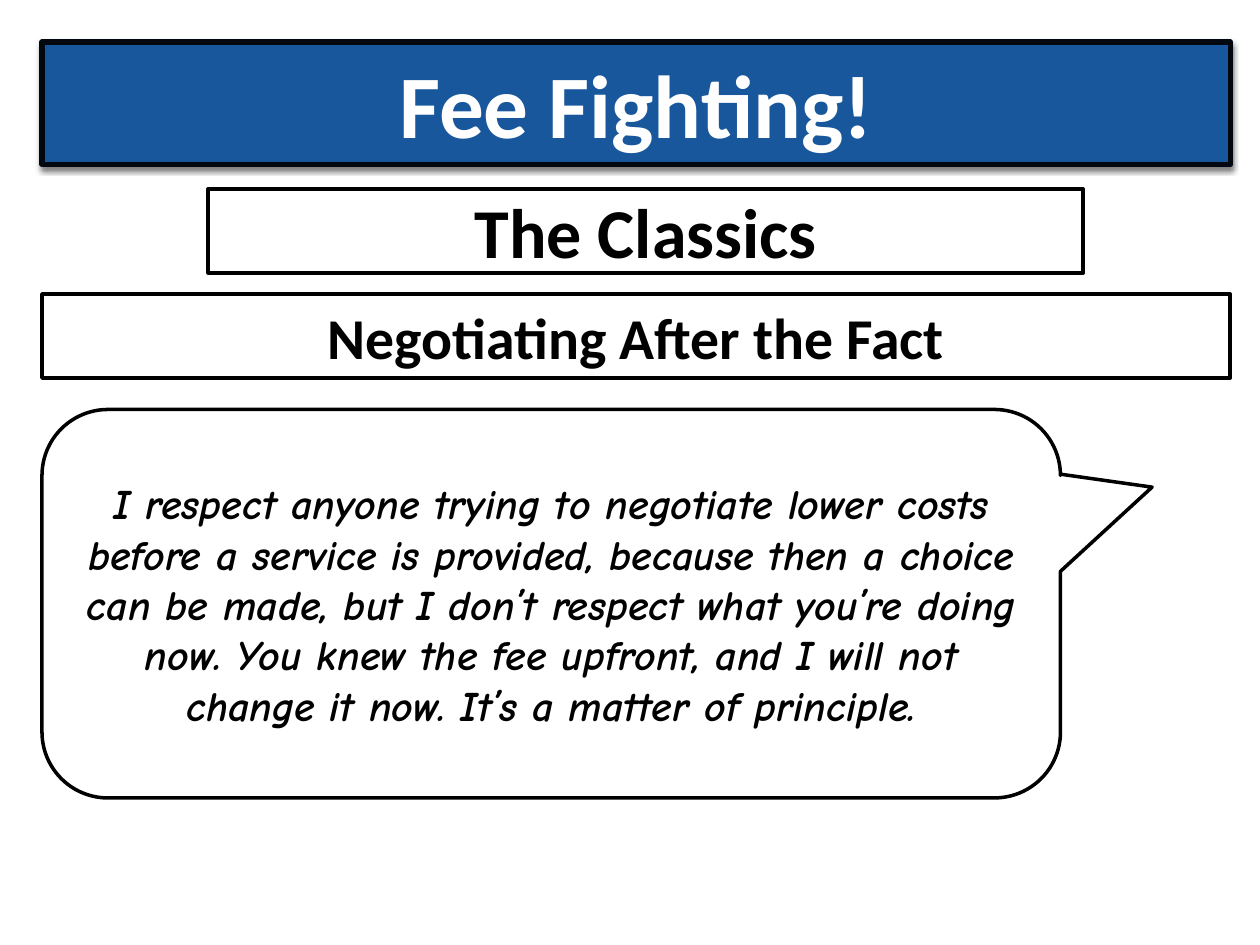
from dataclasses import dataclass

from lxml.etree import SubElement
from pptx import Presentation
from pptx.dml.color import RGBColor
from pptx.enum.shapes import MSO_SHAPE
from pptx.enum.text import MSO_ANCHOR, MSO_AUTO_SIZE, PP_ALIGN
from pptx.oxml.ns import qn
from pptx.shapes.autoshape import Shape
from pptx.util import Pt

COLORS = {
    "blue": "18579B",
    "navy": "02080F",
    "white": "FFFFFF",
    "black": "000000",
}
LEFT = 24
FULL_WIDTH = 679


@dataclass
class Panel:
    text: str
    left: float
    top: float
    width: float
    height: float
    size: float
    font: str = "Calibri"
    italic: bool = False
    fill: str = "white"
    line: str = "black"
    line_width: float = 2
    color: str = "black"
    kind: MSO_SHAPE = MSO_SHAPE.RECTANGLE
    adjustments: tuple[float, ...] = ()


TITLE = Panel("Fee Fighting!", LEFT, 24, FULL_WIDTH, 70, 51,
              fill="blue", line="navy", line_width=3, color="white")
PANELS = [
    Panel("The Classics", 119, 108, 500, 48, 40),
    Panel("Negotiating After the Fact", LEFT, 168, FULL_WIDTH, 48, 33),
    Panel(
        "I respect anyone trying to negotiate lower costs before a service is "
        "provided, because then a choice can be made, but I don’t respect what "
        "you’re doing now. You knew the fee upfront, and I will not change it "
        "now. It’s a matter of principle.",
        LEFT, 234, 582, 222, 24, font="Comic Neue", italic=True,
        kind=MSO_SHAPE.ROUNDED_RECTANGULAR_CALLOUT,
        adjustments=(0.59, -0.3, 0.17),
    ),
]


def rgb(name: str) -> RGBColor:
    return RGBColor.from_string(COLORS[name])


def format_panel(shape: Shape, panel: Panel) -> None:
    """Place a shape and give it the panel's fill, line and text."""
    shape.left, shape.top = Pt(panel.left), Pt(panel.top)
    shape.width, shape.height = Pt(panel.width), Pt(panel.height)
    shape.fill.solid()
    shape.fill.fore_color.rgb = rgb(panel.fill)
    shape.line.color.rgb = rgb(panel.line)
    shape.line.width = Pt(panel.line_width)
    shape.shadow.inherit = False

    text_frame = shape.text_frame
    text_frame.text = panel.text
    text_frame.word_wrap = True
    text_frame.auto_size = MSO_AUTO_SIZE.NONE
    text_frame.vertical_anchor = MSO_ANCHOR.MIDDLE
    paragraph = text_frame.paragraphs[0]
    paragraph.alignment = PP_ALIGN.CENTER
    font = paragraph.runs[0].font
    font.name = panel.font
    font.size = Pt(panel.size)
    font.bold = True
    font.italic = panel.italic
    font.color.rgb = rgb(panel.color)


def add_panel(slide, panel: Panel) -> None:
    shape = slide.shapes.add_shape(panel.kind, 0, 0, Pt(panel.width), Pt(panel.height))
    for index, value in enumerate(panel.adjustments):
        shape.adjustments[index] = value
    format_panel(shape, panel)


def add_drop_shadow(shape: Shape) -> None:
    """Cast a soft, half-transparent shadow straight down."""
    effects = shape._element.spPr.find(qn("a:effectLst"))
    shadow = SubElement(effects, qn("a:outerShdw"), blurRad=str(Pt(3)),
                        dist=str(Pt(2)), dir="5400000", rotWithShape="0")
    color = SubElement(shadow, qn("a:srgbClr"), val=COLORS["black"])
    SubElement(color, qn("a:alpha"), val="50000")


def main() -> None:
    presentation = Presentation()
    presentation.slide_width, presentation.slide_height = Pt(720), Pt(540)
    slide = presentation.slides.add_slide(presentation.slide_layouts[5])

    # Title banner
    format_panel(slide.shapes.title, TITLE)
    add_drop_shadow(slide.shapes.title)

    # Headings and speech bubble
    for panel in PANELS:
        add_panel(slide, panel)

    presentation.save("out.pptx")


if __name__ == "__main__":
    main()
